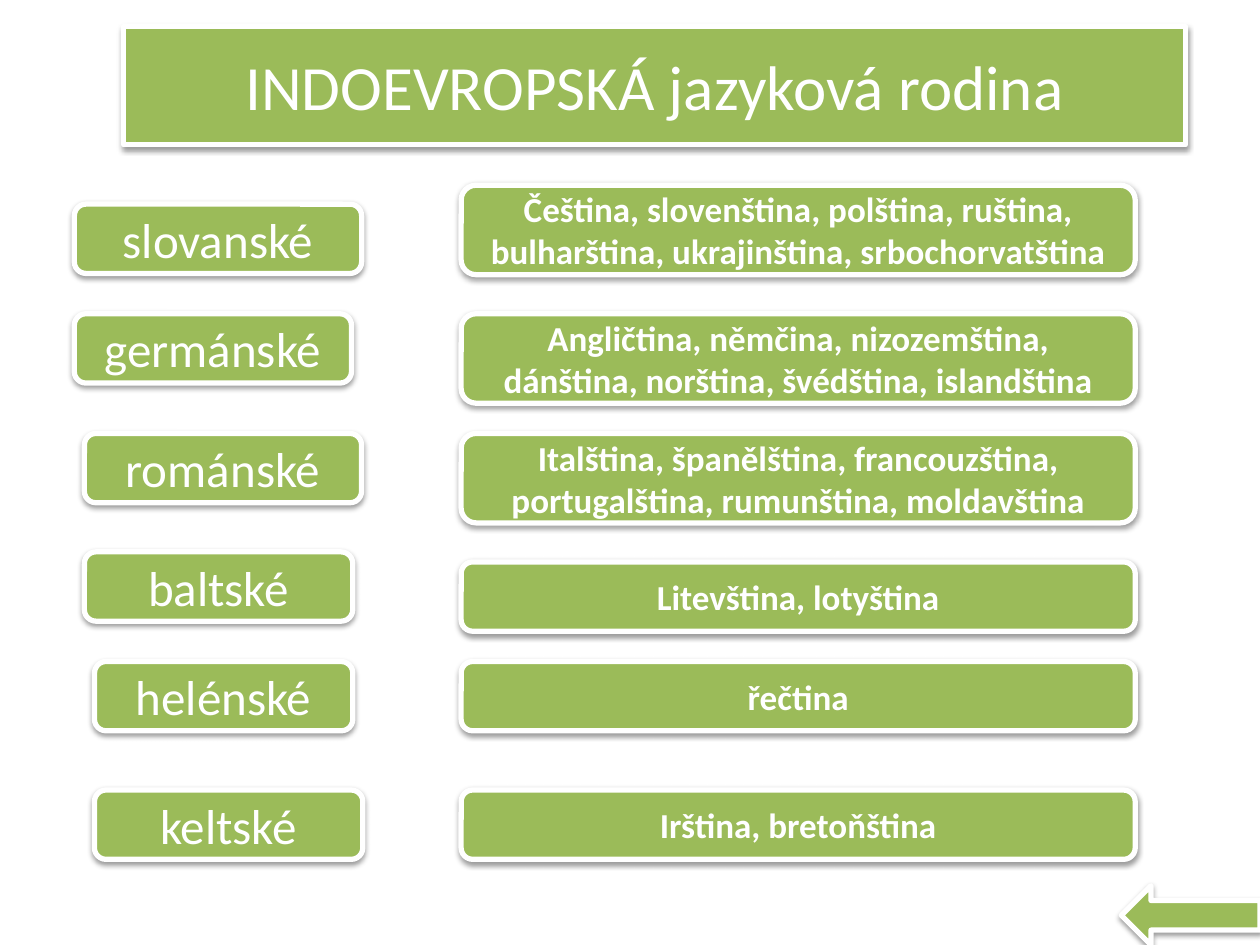
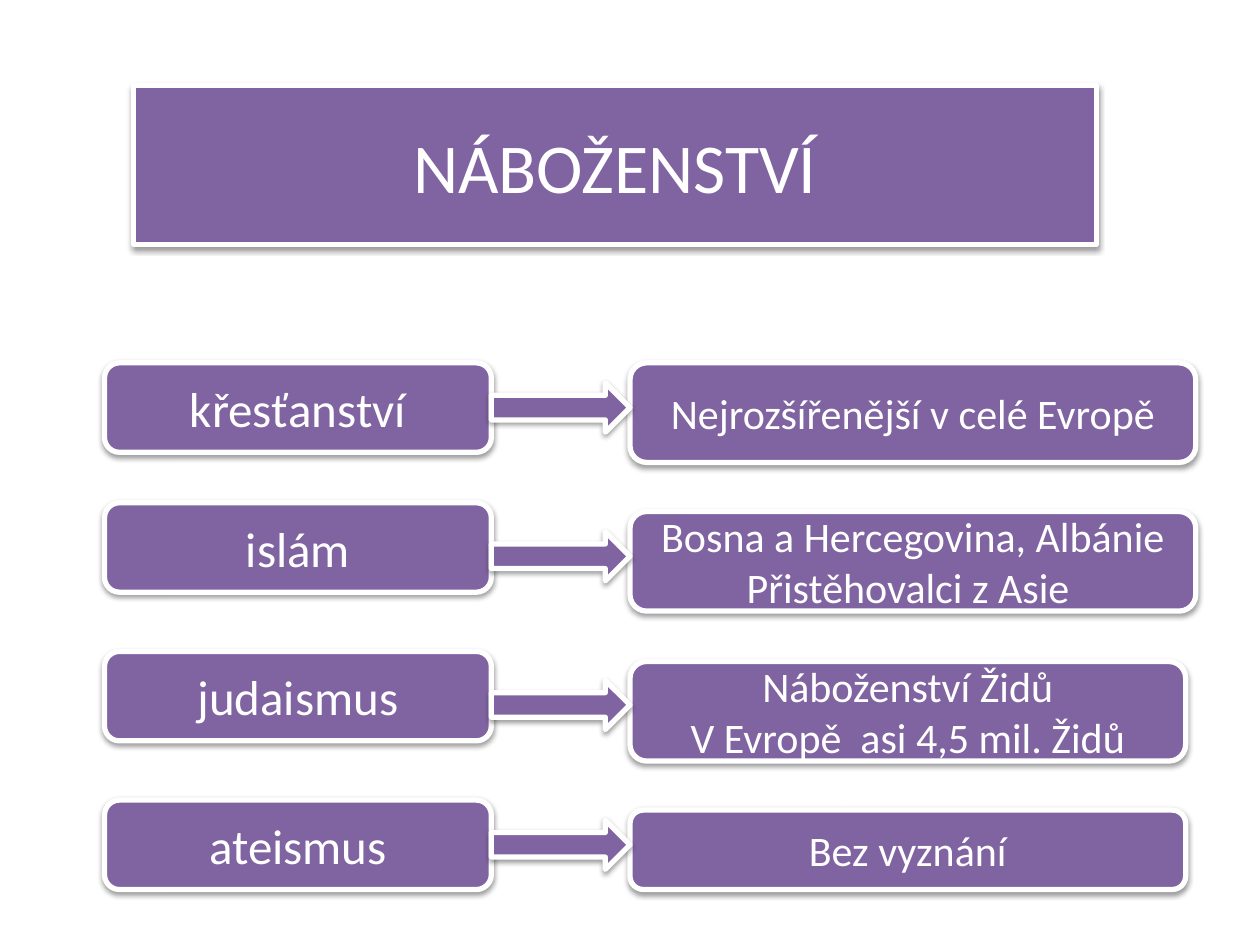
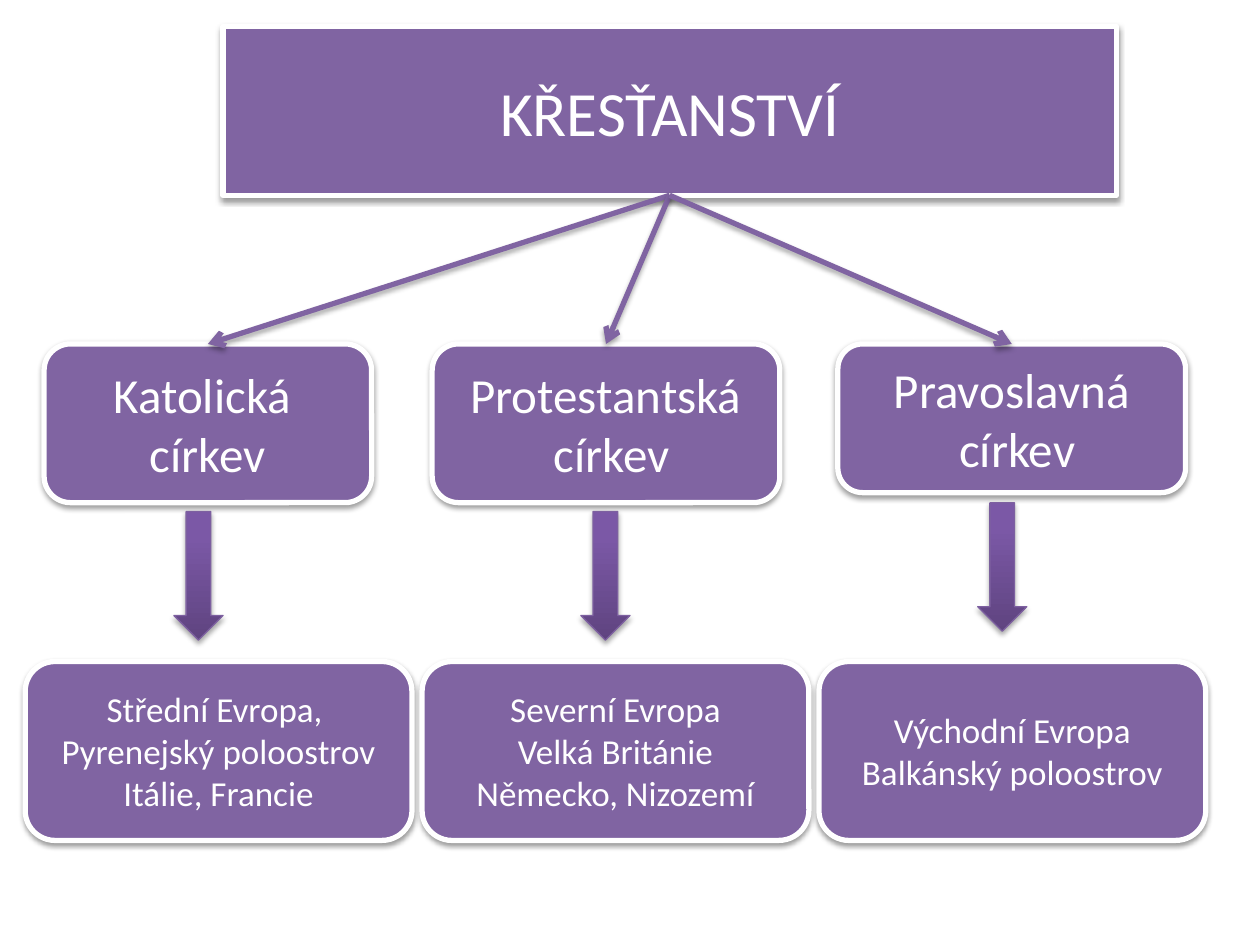
"""Build three slides on the languages and religions of Europe."""
from copy import deepcopy
from dataclasses import dataclass

from lxml import etree
from pptx import Presentation
from pptx import util as u
from pptx.dml import color
from pptx.enum import shapes, text
from pptx.oxml import ns

Kind = shapes.MSO_SHAPE


@dataclass(frozen=True)
class Theme:
    """Colours, type sizes and line widths shared by the slides."""

    font: str = "Calibri"
    white: str = "FFFFFF"
    black: str = "000000"
    language: str = "9BBB59"
    religion: str = "8064A2"
    arrow_edge: str = "7D60A0"
    arrow_stops: tuple = ((0, "5F4480"), (0.8, "7B58A6"), (1, "7C57A8"))
    title: int = 36
    big_title: int = 40
    label: int = 28
    detail: int = 24
    small: int = 20
    border: float = 3
    thin: float = 0.75


THEME = Theme()


def rgb(value):
    """Turn a hex string into a colour."""
    return color.RGBColor.from_string(value)


def add_xml(parent, tag, **attributes):
    """Append a DrawingML element to a parent."""
    return etree.SubElement(parent, ns.qn(tag), attributes)


def cast_shadow(item, opacity, distance):
    """Give a finished shape or connector a soft shadow straight below it."""
    effects = add_xml(item._element.spPr, "a:effectLst")
    shadow = add_xml(effects, "a:outerShdw", blurRad=str(u.Pt(3.1)), dist=str(u.Pt(distance)),
                     dir="5400000", rotWithShape="0")
    tint = add_xml(shadow, "a:srgbClr", val=THEME.black)
    add_xml(tint, "a:alpha", val=str(opacity * 1000))


def write(shape, content, *, size, bold=False, ink=THEME.white):
    """Write centred paragraphs, one for each line of the content."""
    frame = shape.text_frame
    frame.text = content
    frame.word_wrap = True
    frame.auto_size = text.MSO_AUTO_SIZE.NONE
    frame.vertical_anchor = text.MSO_ANCHOR.MIDDLE
    for paragraph in frame.paragraphs:
        paragraph.alignment = text.PP_ALIGN.CENTER
        font = paragraph.font
        font.name, font.size, font.bold = THEME.font, u.Pt(size), bold
        font.color.rgb = rgb(ink)


def outline(line, ink, width):
    """Colour a line and set its width in points."""
    line.color.rgb = rgb(ink)
    line.width = u.Pt(width)


def paint(shape, fill):
    """Give a shape a flat fill, a white border and a shadow."""
    shape.fill.solid()
    shape.fill.fore_color.rgb = rgb(fill)
    outline(shape.line, THEME.white, THEME.border)
    cast_shadow(shape, 38, 1.6)


def add_preset(slide, kind, at):
    """Add a preset shape at left, top, width and height in inches."""
    return slide.shapes.add_shape(kind, *map(u.Inches, at))


def add_flat(slide, kind, at, fill):
    """Add a preset shape in the flat bordered style."""
    shape = add_preset(slide, kind, at)
    paint(shape, fill)
    return shape


def add_card(slide, content, at, fill, **style):
    """Add a rounded card with text."""
    card = add_flat(slide, Kind.ROUNDED_RECTANGLE, at, fill)
    write(card, content, **style)
    return card


def add_titled_slide(deck, content, at, fill, size):
    """Add a slide whose title is a rounded banner."""
    slide = deck.slides.add_slide(deck.slide_layouts[5])
    banner = slide.shapes.title
    banner.left, banner.top, banner.width, banner.height = map(u.Inches, at)
    outline_form = add_xml(banner._element.spPr, "a:prstGeom", prst="roundRect")
    add_xml(outline_form, "a:avLst")
    paint(banner, fill)
    write(banner, content, size=size)
    return slide


def add_gradient_arrow(slide, at):
    """Add a down arrow that darkens towards its head."""
    arrow = add_preset(slide, Kind.DOWN_ARROW, at)
    arrow.fill.gradient()
    arrow.fill.gradient_angle = 90
    stop_list = arrow._element.spPr.find(".//" + ns.qn("a:gsLst"))
    stop_list.append(deepcopy(stop_list[-1]))
    for stop, (position, ink) in zip(arrow.fill.gradient_stops, THEME.arrow_stops):
        stop.position = position
        stop.color.rgb = rgb(ink)
    outline(arrow.line, THEME.arrow_edge, THEME.thin)
    cast_shadow(arrow, 35, 1.8)


def add_branch(slide, parent, child):
    """Draw an arrow from the bottom of one card to the top of another."""
    branch = slide.shapes.add_connector(shapes.MSO_CONNECTOR.STRAIGHT, 0, 0, 0, 0)
    branch.begin_connect(parent, 2)
    branch.end_connect(child, 0)
    outline(branch.line, THEME.religion, THEME.border)
    add_xml(branch.line._get_or_add_ln(), "a:tailEnd", type="arrow")
    cast_shadow(branch, 35, 1.8)


def build_languages(deck):
    """Pair each Indo-European branch with its languages."""
    slide = add_titled_slide(deck, "INDOEVROPSKÁ jazyková rodina", (0.98, 0.21, 8.43, 0.94),
                             THEME.language, THEME.title)
    branches = [
        ("slovanské", 0.59, 1.62, 2.28, 1.47, 0.71,
         "Čeština, slovenština, polština, ruština, bulharština, ukrajinština, srbochorvatština"),
        ("germánské", 0.59, 2.49, 2.2, 2.49, 0.71,
         "Angličtina, němčina, nizozemština, dánština, norština, švédština, islandština"),
        ("románské", 0.67, 3.44, 2.2, 3.44, 0.71,
         "Italština, španělština, francouzština, portugalština, rumunština, moldavština"),
        ("baltské", 0.67, 4.38, 2.13, 4.46, 0.55, "Litevština, lotyština"),
        ("helénské", 0.75, 5.25, 2.05, 5.25, 0.55, "řečtina"),
        ("keltské", 0.75, 6.27, 2.13, 6.27, 0.55, "Irština, bretoňština"),
    ]
    for branch, left, top, width, languages_top, languages_height, languages in branches:
        add_card(slide, branch, (left, top, width, 0.55), THEME.language, size=THEME.label)
        add_card(slide, languages, (3.66, languages_top, 5.35, languages_height),
                 THEME.language, size=THEME.small, bold=True)
    add_flat(slide, Kind.LEFT_ARROW, (8.9, 7.03, 1.1, 0.47), THEME.language)


def build_religions(deck):
    """Link each religion to where it is found."""
    slide = add_titled_slide(deck, "NÁBOŽENSTVÍ", (1.06, 0.68, 7.64, 1.26),
                             THEME.religion, THEME.big_title)
    religions = [
        ("křesťanství", 2.88, 3.04, (2.88, 4.49, 0.79), "Nejrozšířenější v celé Evropě"),
        ("islám", 3.99, 4.22, (4.06, 4.49, 0.79),
         "Bosna a Hercegovina, Albánie\nPřistěhovalci z Asie "),
        ("judaismus", 5.17, 5.4, (5.25, 4.41, 0.79),
         "Náboženství Židů\nV Evropě  asi 4,5 mil. Židů"),
        ("ateismus", 6.35, 6.51, (6.43, 4.41, 0.63), "Bez vyznání"),
    ]
    for religion, top, arrow_top, (spread_top, width, height), spread in religions:
        add_card(slide, religion, (0.83, top, 3.07, 0.71), THEME.religion, size=THEME.label)
        add_card(slide, spread, (5, spread_top, width, height), THEME.religion, size=THEME.detail)
        add_flat(slide, Kind.RIGHT_ARROW, (3.9, arrow_top, 1.1, 0.39), THEME.religion)


def build_christianity(deck):
    """Divide Christianity into churches and their regions."""
    slide = add_titled_slide(deck, "KŘESŤANSTVÍ", (1.77, 0.21, 7.09, 1.34),
                             THEME.religion, THEME.title)
    churches = [
        ("Katolická \ncírkev", 0.35, 2.6, 1.26, (1.38, 4.06),
         "Střední Evropa, \nPyrenejský poloostrov\nItálie, Francie"),
        ("Protestantská\n církev", 3.43, 2.76, 1.26, (4.61, 4.06),
         "Severní Evropa\nVelká Británie\nNěmecko, Nizozemí"),
        ("Pravoslavná\n církev", 6.65, 2.76, 1.18, (7.76, 3.99),
         "Východní Evropa\nBalkánský poloostrov"),
    ]
    for column, (name, left, width, height, arrow_at, regions) in enumerate(churches):
        church = add_card(slide, name, (left, 2.73, width, height),
                          THEME.religion, size=THEME.label)
        add_branch(slide, slide.shapes.title, church)
        add_gradient_arrow(slide, (*arrow_at, 0.39, 1.02))
        add_card(slide, regions, (0.2 + 3.15 * column, 5.25, 3.07, 1.42),
                 THEME.religion, size=THEME.small)


def main():
    """Build the deck and save it."""
    deck = Presentation()
    deck.slide_width, deck.slide_height = u.Inches(10), u.Inches(7.5)
    build_languages(deck)
    build_religions(deck)
    build_christianity(deck)
    deck.save("out.pptx")


if __name__ == "__main__":
    main()
